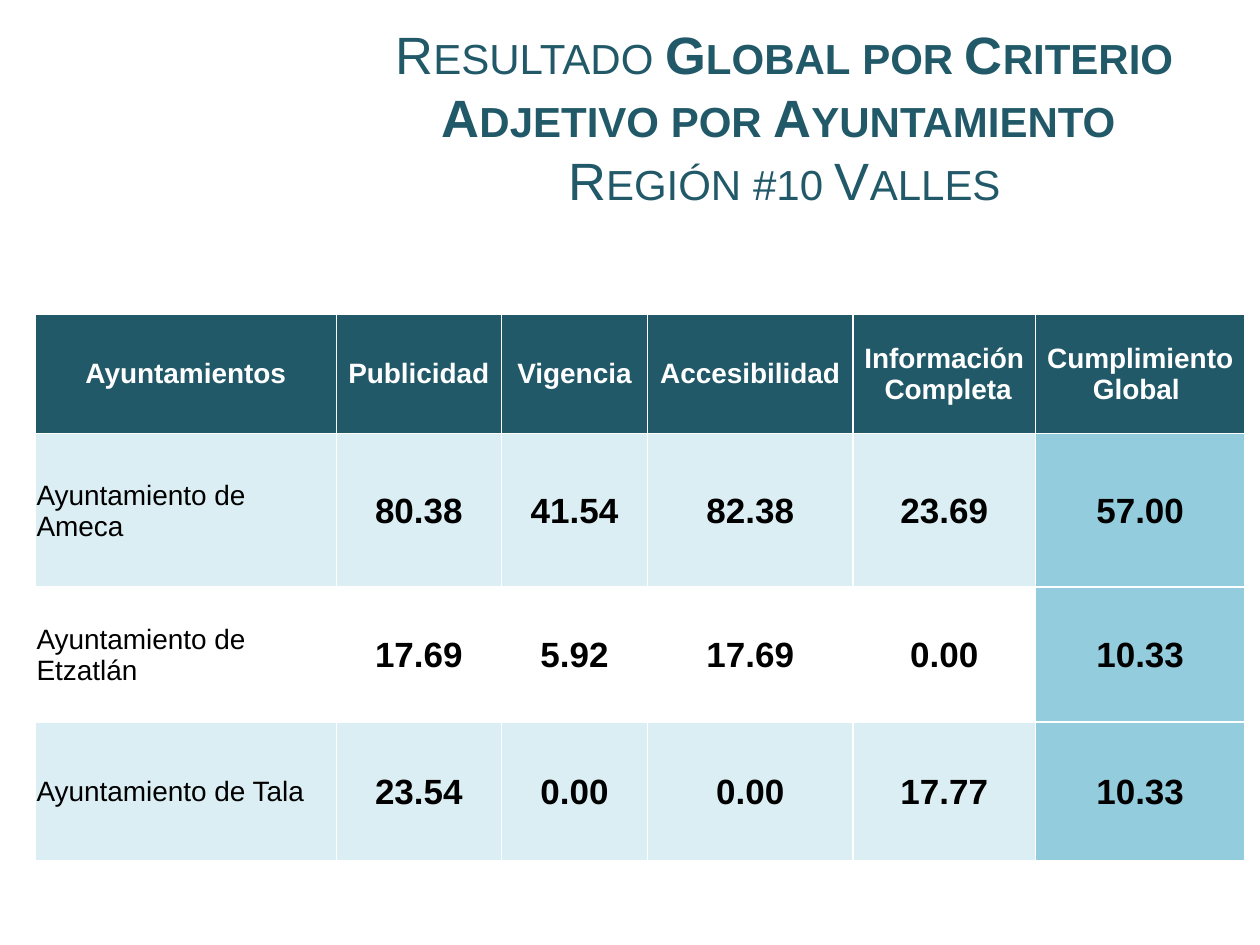
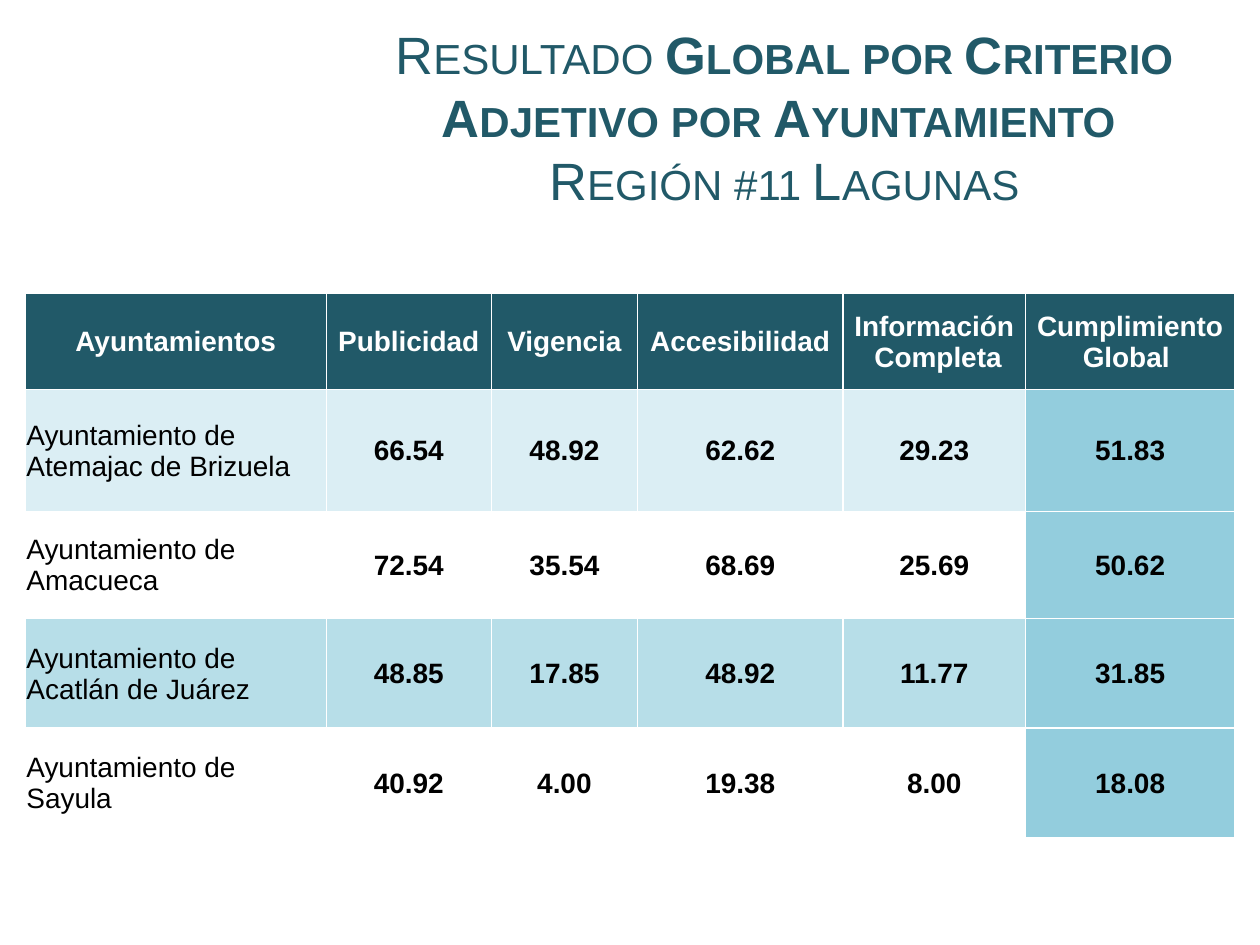
"""Builds two slides with the results by criterion for each region."""
from lxml import etree
from pptx import Presentation
from pptx.dml.color import RGBColor
from pptx.enum.text import MSO_ANCHOR, PP_ALIGN
from pptx.oxml.ns import qn
from pptx.util import Inches, Pt

MIDDLE = MSO_ANCHOR.MIDDLE
CENTER, LEFT = PP_ALIGN.CENTER, PP_ALIGN.LEFT

FONT = "Arial"
COLORS = {"dark": "215968", "pale": "DBEEF4", "soft": "B7DEE8",
          "total": "93CDDD", "white": "FFFFFF", "black": "000000"}

TITLE = [("Resultado ", False),
         ("Global por Criterio Adjetivo por Ayuntamiento \v", True)]
TITLE_BOX = (2.95, 0.3, 6.55, 1.25)
HEADERS = ["Ayuntamientos", "Publicidad", "Vigencia", "Accesibilidad",
           "Información\v Completa", "Cumplimiento Global "]
COLUMNS = [2.39, 1.31, 1.16, 1.63, 1.45, 1.66]

REGIONS = [
    {"name": "Región #10 Valles", "corner": (0.28, 2.49), "size": 20,
     "heights": [0.95, 1.22, 1.07, 1.1], "bands": ["pale", "white", "pale"],
     "rows": [
         ("Ameca", "80.38", "41.54", "82.38", "23.69", "57.00"),
         ("Etzatlán", "17.69", "5.92", "17.69", "0.00", "10.33"),
         ("Tala", "23.54", "0.00", "0.00", "17.77", "10.33")]},
    {"name": "Región #11 Lagunas", "corner": (0.2, 2.33), "size": 16,
     "heights": [0.76, 0.97, 0.85, 0.87, 0.87],
     "bands": ["pale", "white", "soft", None],
     "rows": [
         ("Atemajac de Brizuela", "66.54", "48.92", "62.62", "29.23", "51.83"),
         ("Amacueca", "72.54", "35.54", "68.69", "25.69", "50.62"),
         ("Acatlán de Juárez", "48.85", "17.85", "48.92", "11.77", "31.85"),
         ("Sayula", "40.92", "4.00", "19.38", "8.00", "18.08")]},
]


def rgb(name):
    return RGBColor.from_string(COLORS[name])


def style(p, size, color, align):
    p.alignment = align
    p.font.name, p.font.size = FONT, Pt(size)
    p.font.color.rgb = rgb(color)


def add_title(slide, region_name):
    tf = slide.shapes.add_textbox(*map(Inches, TITLE_BOX)).text_frame
    tf.word_wrap, tf.vertical_anchor = True, MIDDLE
    p = tf.paragraphs[0]
    for text, bold in TITLE + [(region_name, False)]:
        r = p.add_run()
        r.text = text.rstrip("\v")
        r.font.bold = bold
        r.font.name, r.font.size = FONT, Pt(30)
        r.font.color.rgb = rgb("dark")
        r.font._element.set("cap", "small")
        if text.endswith("\v"):
            p.add_line_break()
    style(p, 30, "dark", CENTER)


def add_borders(cell):
    tc_pr = cell._tc.get_or_add_tcPr()
    for side in ("lnL", "lnR", "lnT", "lnB"):
        ln = etree.SubElement(tc_pr, qn(f"a:{side}"), w=str(Pt(1)))
        fill = etree.SubElement(ln, qn("a:solidFill"))
        etree.SubElement(fill, qn("a:srgbClr"), val=COLORS["white"])


def fill_cell(cell, text, fill, size, color, bold, align):
    cell.margin_left = cell.margin_right = cell.margin_top = Inches(0.01)
    cell.margin_bottom = 0
    cell.vertical_anchor = MIDDLE
    add_borders(cell)
    if fill:
        cell.fill.solid()
        cell.fill.fore_color.rgb = rgb(fill)
    else:
        cell.fill.background()
    p = cell.text_frame.paragraphs[0]
    p.text = text
    style(p, size, color, align)
    p.font.bold = bold


def add_results(slide, region):
    heights, rows = region["heights"], region["rows"]
    box = (*region["corner"], sum(COLUMNS), sum(heights))
    table = slide.shapes.add_table(
        len(heights), len(COLUMNS), *map(Inches, box)).table
    for column, width in zip(table.columns, COLUMNS):
        column.width = Inches(width)
    for row, height in zip(table.rows, heights):
        row.height = Inches(height)
    for c, text in enumerate(HEADERS):
        fill_cell(table.cell(0, c), text, "dark", 16, "white", True, CENTER)
    for i, ((town, *values), band) in enumerate(zip(rows, region["bands"]), 1):
        fill_cell(table.cell(i, 0), f"Ayuntamiento de {town}", band,
                  16, "black", False, LEFT)
        for c, value in enumerate(values, 1):
            fill = "total" if c == len(values) else band
            fill_cell(table.cell(i, c), value, fill,
                      region["size"], "black", True, CENTER)


def main():
    prs = Presentation()
    prs.slide_width, prs.slide_height = Inches(10), Inches(7.5)
    for region in REGIONS:
        slide = prs.slides.add_slide(prs.slide_layouts[6])
        add_title(slide, region["name"])
        add_results(slide, region)
    prs.save("out.pptx")


if __name__ == "__main__":
    main()
